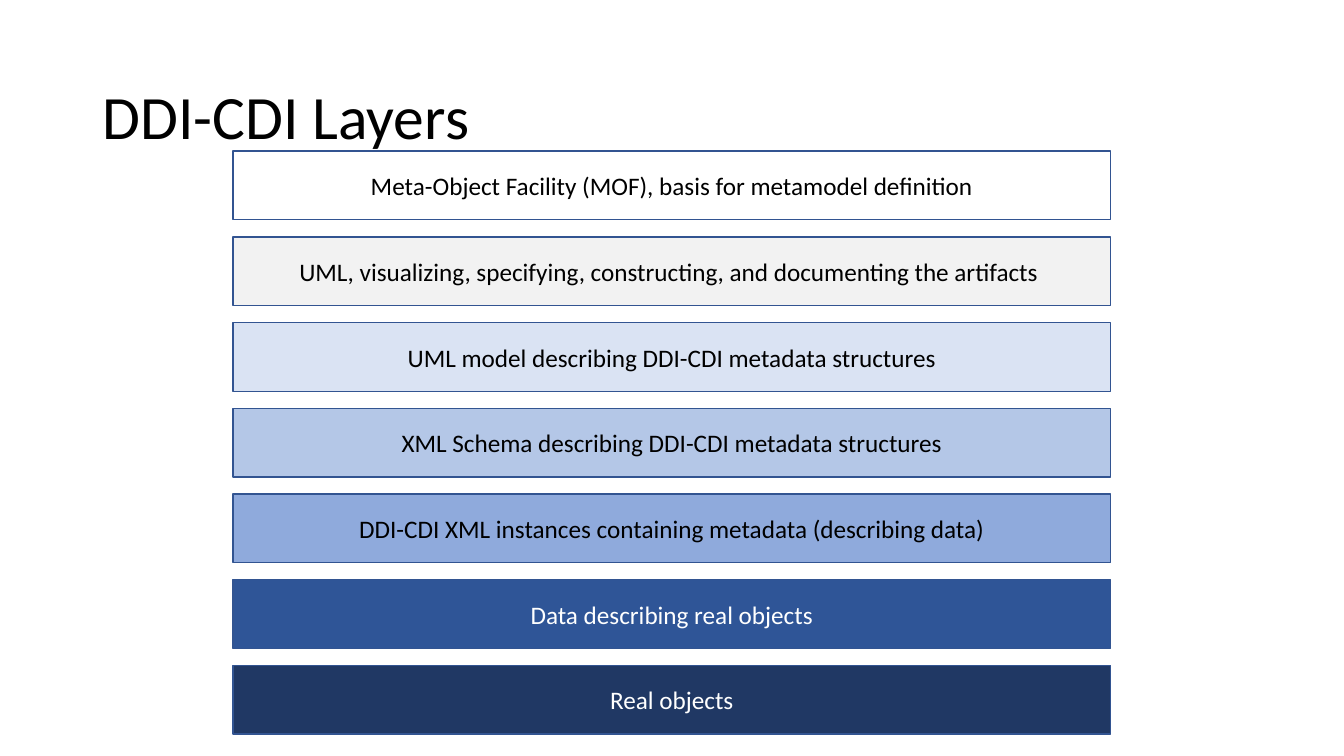
from pptx import Presentation
from pptx.dml.color import RGBColor
from pptx.enum.shapes import MSO_SHAPE as Shape
from pptx.enum.text import MSO_ANCHOR as Anchor, PP_ALIGN as Align
from pptx.util import Cm, Pt

BLACK = RGBColor(0x00, 0x00, 0x00)
WHITE = RGBColor(0xFF, 0xFF, 0xFF)
GREY = RGBColor(0xF2, 0xF2, 0xF2)
PALE = RGBColor(0xDA, 0xE3, 0xF3)
LIGHT = RGBColor(0xB4, 0xC7, 0xE7)
MID = RGBColor(0x8F, 0xAA, 0xDC)
BLUE = RGBColor(0x2F, 0x55, 0x97)
NAVY = RGBColor(0x20, 0x38, 0x64)
EDGE = RGBColor(0x32, 0x54, 0x91)

FONT = "Calibri"
TITLE = "DDI-CDI Layers"
LAYERS = [
    ("Meta-Object Facility (MOF), basis for metamodel definition", WHITE, BLACK),
    ("UML, visualizing, specifying, constructing, and documenting the artifacts ", GREY, BLACK),
    ("UML model describing DDI-CDI metadata structures", PALE, BLACK),
    ("XML Schema describing DDI-CDI metadata structures", LIGHT, BLACK),
    ("DDI-CDI XML instances containing metadata (describing data)", MID, BLACK),
    ("Data describing real objects", BLUE, WHITE),
    ("Real objects", NAVY, WHITE),
]

LEFT, TOP = 5.87, 3.81
WIDTH, HEIGHT = 22.12, 1.73
PITCH = 2.16


def write(shape, text, size, color, align):
    frame = shape.text_frame
    frame.word_wrap = True
    frame.vertical_anchor = Anchor.MIDDLE
    para = frame.paragraphs[0]
    para.alignment = align
    run = para.add_run()
    run.text = text
    run.font.name = FONT
    run.font.size = Pt(size)
    run.font.color.rgb = color
    return para


def add_layer(slide, row, text, fill, ink):
    bar = slide.shapes.add_shape(
        Shape.RECTANGLE, Cm(LEFT), Cm(TOP + row * PITCH), Cm(WIDTH), Cm(HEIGHT))
    bar.shadow.inherit = False
    bar.fill.solid()
    bar.fill.fore_color.rgb = fill
    bar.line.color.rgb = EDGE
    bar.line.width = Pt(1)
    write(bar, text, 18, ink, Align.CENTER)


def main():
    deck = Presentation()
    deck.slide_width, deck.slide_height = Cm(33.87), Cm(19.05)
    slide = deck.slides.add_slide(deck.slide_layouts[6])
    title = slide.shapes.add_textbox(Cm(2.33), Cm(1.17), Cm(29.21), Cm(3.68))
    write(title, TITLE, 44, BLACK, Align.LEFT).line_spacing = 0.9
    for row, layer in reversed(list(enumerate(LAYERS))):
        add_layer(slide, row, *layer)
    deck.save("out.pptx")


if __name__ == "__main__":
    main()
